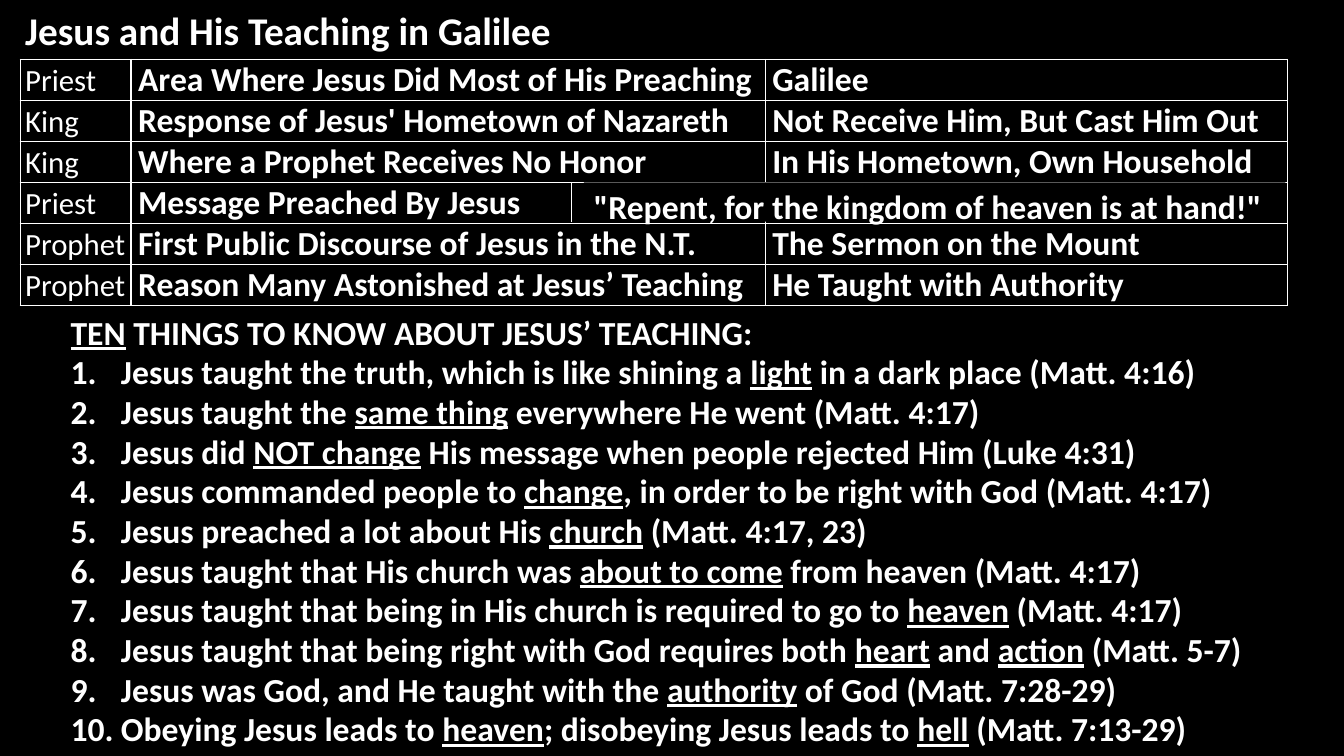
"""Build the slide about the teaching of Jesus in Galilee."""
import pptx
import pptx.util
import pptx.dml.color
import pptx.enum.shapes
import pptx.enum.text
import pptx.oxml
import pptx.oxml.ns

Inches = pptx.util.Inches
Pt = pptx.util.Pt
RGBColor = pptx.dml.color.RGBColor
Anchor = pptx.enum.text.MSO_ANCHOR
Align = pptx.enum.text.PP_ALIGN

WHITE = RGBColor(0xFF, 0xFF, 0xFF)
BLACK = RGBColor(0, 0, 0)
FONT = "Calibri"
TITLE = "Jesus and His Teaching in Galilee"
QUOTE = '"Repent, for the kingdom of heaven is at hand!"'
WIDTHS = [1.1, 6.29, 5.18]
ROW = 0.405
ROWS = [
    ("Priest", "Area Where Jesus Did Most of His Preaching", "Galilee"),
    ("King", "Response of Jesus' Hometown of Nazareth", "Not Receive Him, But Cast Him Out"),
    ("King", "Where a Prophet Receives No Honor", "In His Hometown, Own Household"),
    ("Priest", "Message Preached By Jesus", ""),
    ("Prophet", "First Public Discourse of Jesus in the N.T.", "The Sermon on the Mount"),
    ("Prophet", "Reason Many Astonished at Jesus’ Teaching", "He Taught with Authority"),
]
HEADING = "_TEN_ THINGS TO KNOW ABOUT JESUS’ TEACHING:"
POINTS = [
    "Jesus taught the truth, which is like shining a _light_ in a dark place (Matt. 4:16)",
    "Jesus taught the _same thing_ everywhere He went (Matt. 4:17)",
    "Jesus did _NOT change_ His message when people rejected Him (Luke 4:31)",
    "Jesus commanded people to _change_, in order to be right with God (Matt. 4:17)",
    "Jesus preached a lot about His _church_ (Matt. 4:17, 23)",
    "Jesus taught that His church was _about to come_ from heaven (Matt. 4:17)",
    "Jesus taught that being in His church is required to go to _heaven_ (Matt. 4:17)",
    "Jesus taught that being right with God requires both _heart_ and _action_ (Matt. 5-7)",
    "Jesus was God, and He taught with the _authority_ of God (Matt. 7:28-29)",
    "Obeying Jesus leads to _heaven_; disobeying Jesus leads to _hell_ (Matt. 7:13-29)",
]


def add_xml(parent, tag, inner="", **attrs):
    """Append a drawing element to its parent."""
    words = "".join(f' {key}="{value}"' for key, value in attrs.items())
    space = pptx.oxml.ns.nsdecls("a")
    parent.append(pptx.oxml.parse_xml(f"<a:{tag} {space}{words}>{inner}</a:{tag}>"))


def style(para, size, bold=True):
    """Format every run of a paragraph."""
    para.alignment = Align.LEFT
    for run in para.runs:
        font = run.font
        font.name, font.size, font.bold = FONT, Pt(size), bold
        font.color.rgb = WHITE


def place(shape, left, top, width, height):
    """Set the position and size of a shape."""
    shape.left, shape.top = Inches(left), Inches(top)
    shape.width, shape.height = Inches(width), Inches(height)


def set_frame(frame):
    """Wrap the text at a fixed size from the top."""
    frame.word_wrap = True
    frame.auto_size = pptx.enum.text.MSO_AUTO_SIZE.NONE
    frame.vertical_anchor = Anchor.TOP


def set_title(shape):
    """Fill the title placeholder."""
    place(shape, 0.15, 0.01, 11.66, 0.57)
    set_frame(shape.text_frame)
    shape.text_frame.text = TITLE
    style(shape.text_frame.paragraphs[0], 28)


def set_list(shape):
    """Fill the body with a heading and numbered points."""
    place(shape, 0.6, 3.07, 12.46, 4.52)
    frame = shape.text_frame
    set_frame(frame)
    for index, line in enumerate([HEADING] + POINTS):
        para = frame.add_paragraph() if index else frame.paragraphs[0]
        for part, words in enumerate(line.split("_")):
            if words:
                run = para.add_run()
                run.text = words
                run.font.underline = part % 2 == 1
        style(para, 24)
        para.line_spacing = 0.95
        para.space_before, para.space_after = Pt(0), Pt(1)
        props = para._p.get_or_add_pPr()
        indent = Inches(0.5) if index else 0
        props.set("marL", str(indent))
        props.set("indent", str(-indent))
        if index:
            add_xml(props, "buFont", typeface="+mj-lt")
            add_xml(props, "buAutoNum", type="arabicPeriod")
        else:
            add_xml(props, "buNone")


def set_cell(cell, words, first):
    """Fill and frame one table cell."""
    sides = (0.05, 0.01, 0.01, 0) if first else (0.07, 0, 0.07, 0)
    (cell.margin_left, cell.margin_top,
     cell.margin_right, cell.margin_bottom) = map(Inches, sides)
    cell.vertical_anchor = Anchor.MIDDLE
    cell.text_frame.text = words
    style(cell.text_frame.paragraphs[0], 22 if first else 24, not first)
    props = cell._tc.get_or_add_tcPr()
    for side in ("lnL", "lnR", "lnT", "lnB"):
        ink = f'<a:solidFill><a:srgbClr val="{WHITE}"/></a:solidFill>'
        add_xml(props, side, ink, w=Pt(1))
    cell.fill.solid()
    cell.fill.fore_color.rgb = BLACK


def add_grid(slide):
    """Add the table of offices, facts and answers."""
    frame = slide.shapes.add_table(
        len(ROWS), len(WIDTHS), Inches(0.2), Inches(0.59),
        Inches(sum(WIDTHS)), Inches(ROW * len(ROWS)))
    table = frame.table
    table.first_row = table.horz_banding = False
    for column, width in zip(table.columns, WIDTHS):
        column.width = Inches(width)
    for row, texts in enumerate(ROWS):
        table.rows[row].height = Inches(ROW)
        for col, words in enumerate(texts):
            set_cell(table.cell(row, col), words, col == 0)


def add_quote(slide):
    """Add the wide answer that covers the column border."""
    box = slide.shapes.add_shape(
        pptx.enum.shapes.MSO_SHAPE.RECTANGLE,
        Inches(5.79), Inches(1.81), Inches(6.96), Inches(0.39))
    box.shadow.inherit = False
    box.fill.solid()
    box.fill.fore_color.rgb = BLACK
    box.line.fill.background()
    frame = box.text_frame
    set_frame(frame)
    frame.margin_top, frame.margin_bottom = Inches(0.03), 0
    frame.text = QUOTE
    style(frame.paragraphs[0], 24)


def add_rule(slide):
    """Add the divider left of the wide answer."""
    rule = slide.shapes.add_connector(
        pptx.enum.shapes.MSO_CONNECTOR.STRAIGHT,
        Inches(5.67), Inches(1.81), Inches(5.67), Inches(2.2))
    rule.line.color.rgb = WHITE
    rule.line.width = Pt(0.75)
    add_xml(rule._element.spPr, "effectLst")


def main():
    """Build and save the slide."""
    deck = pptx.Presentation()
    deck.slide_width, deck.slide_height = Inches(13.33), Inches(7.5)
    slide = deck.slides.add_slide(deck.slide_layouts[1])
    slide.background.fill.solid()
    slide.background.fill.fore_color.rgb = BLACK
    set_title(slide.shapes.title)
    add_grid(slide)
    set_list(slide.placeholders[1])
    add_quote(slide)
    add_rule(slide)
    deck.save("out.pptx")


if __name__ == "__main__":
    main()
